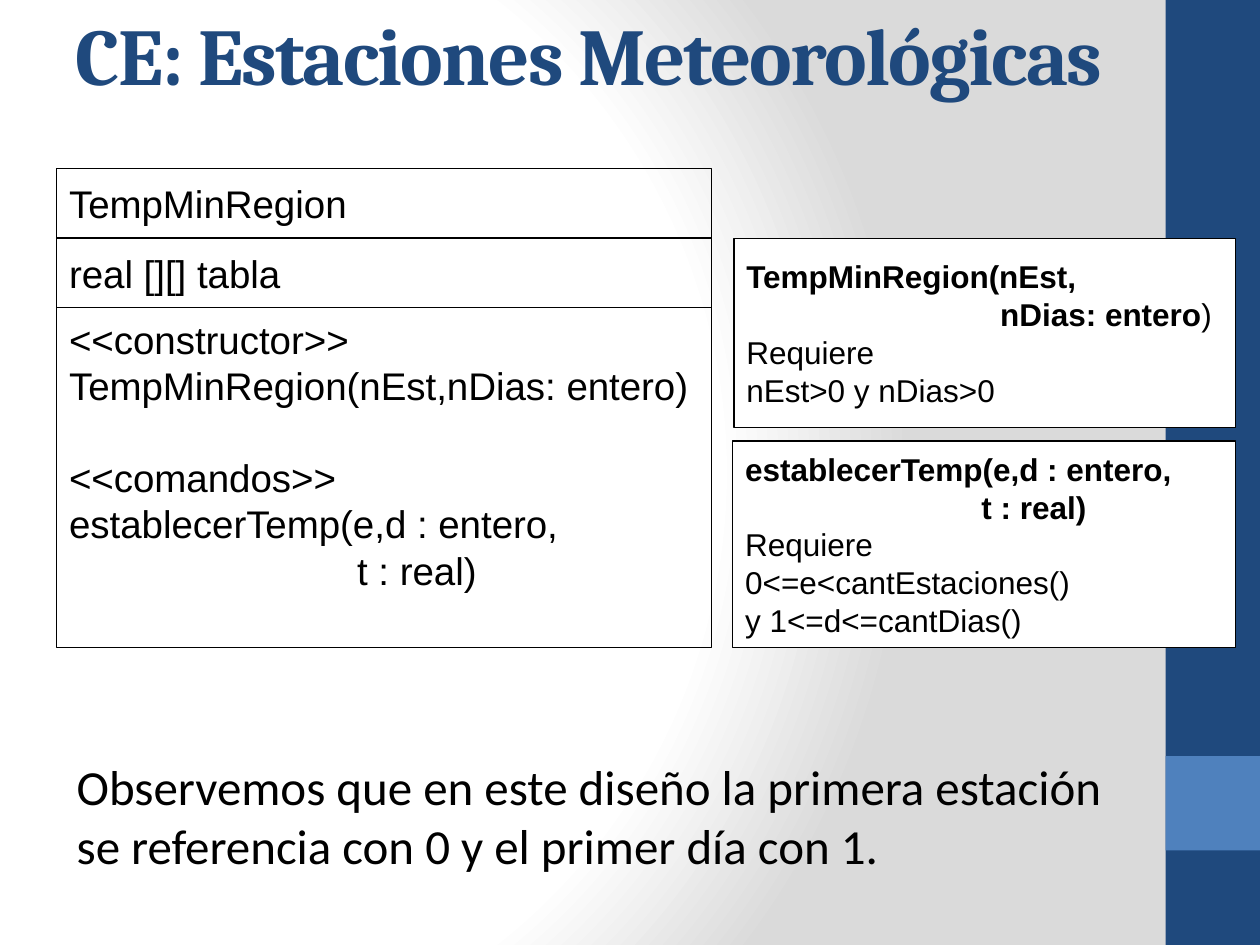
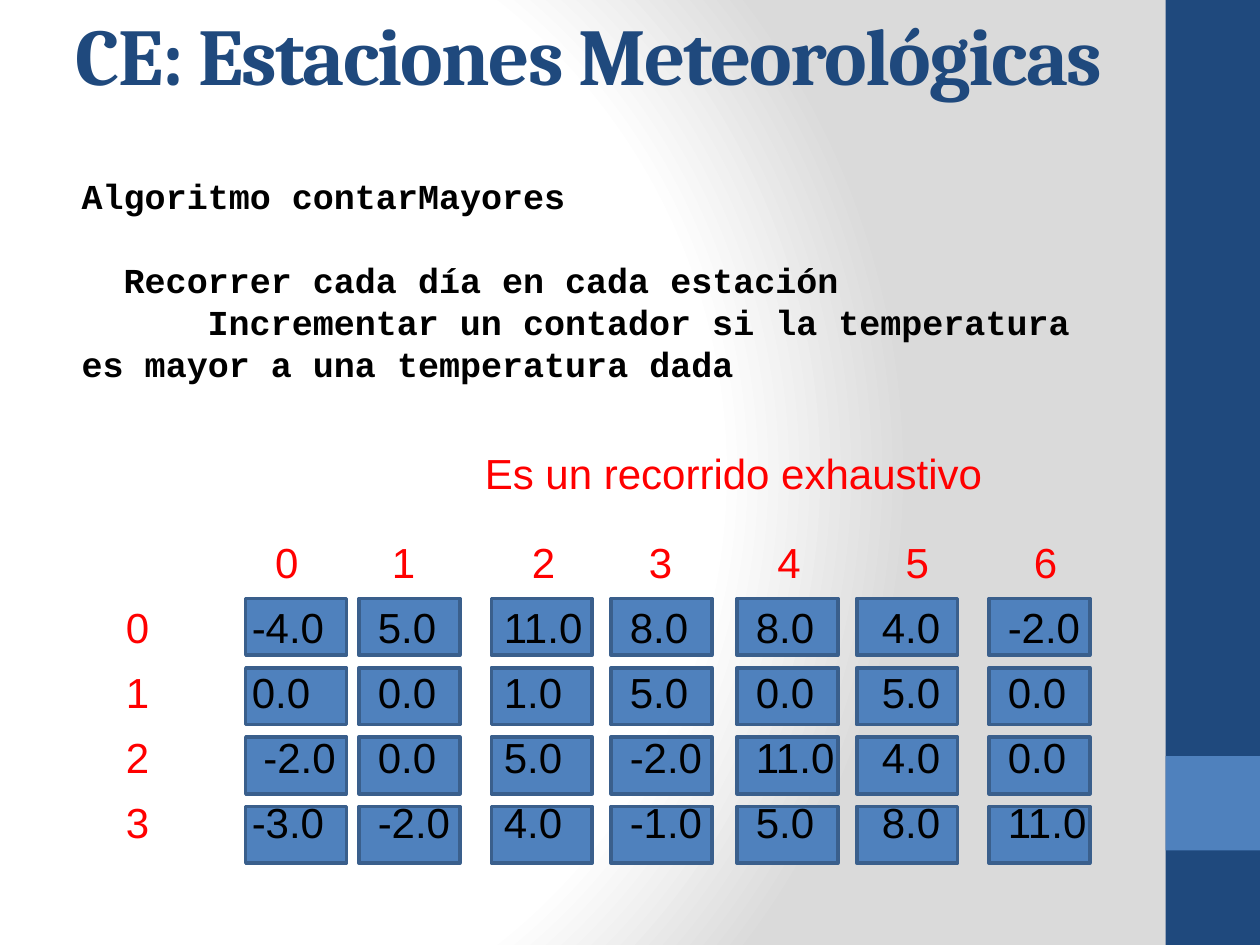
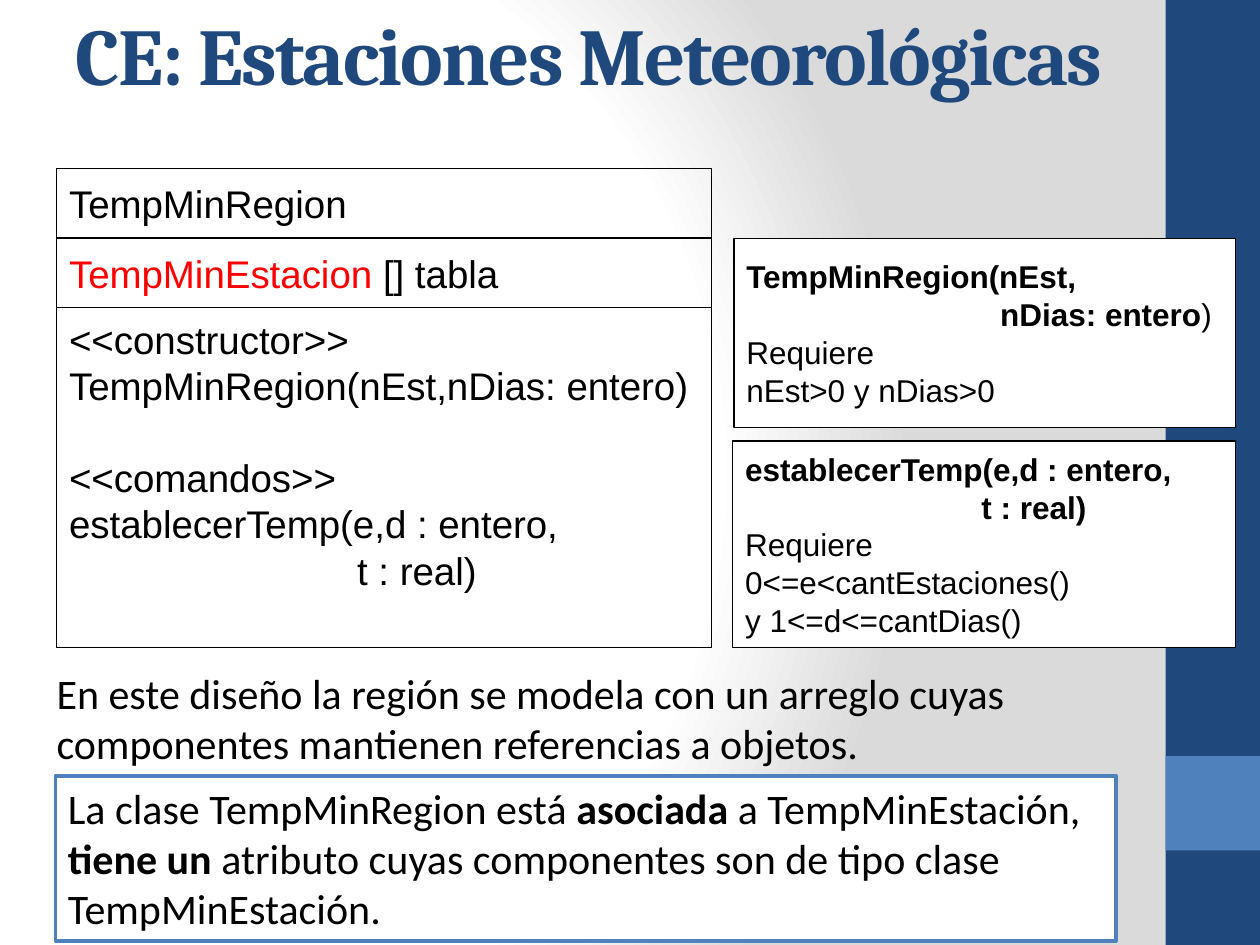
from dataclasses import dataclass
from lxml.etree import SubElement
from pptx import Presentation
from pptx.dml.color import RGBColor
from pptx.enum.shapes import MSO_SHAPE
from pptx.enum.text import MSO_ANCHOR, MSO_AUTO_SIZE, PP_ALIGN
from pptx.oxml import parse_xml
from pptx.oxml.ns import nsdecls, qn
from pptx.util import Pt

NAVY = RGBColor(0x1F, 0x49, 0x7D)
BLUE = RGBColor(0x4F, 0x81, 0xBD)
EDGE = RGBColor(0x3A, 0x5F, 0x8C)
BLACK = RGBColor(0, 0, 0)
WHITE = RGBColor(0xFF, 0xFF, 0xFF)
RED = RGBColor(0xFF, 0, 0)


@dataclass
class Span:
    text: str
    bold: bool = False
    color: RGBColor = BLACK


@dataclass
class Line:
    spans: list
    left: float = 0
    first: float = 0
    gap: float = 0
    tabs: tuple = ()


def plain(text, **layout):
    return Line([Span(text)], **layout)


def strong(text, **layout):
    return Line([Span(text, True)], **layout)


TITLE = "CE: Estaciones Meteorológicas"
BANDS = [(0, 540, NAVY), (432, 54, BLUE)]

CLASS_NAME = [plain("TempMinRegion")]
MATRIX_FIELD = [plain("real [][] tabla")]
OBJECT_FIELD = [Line([Span("TempMinEstacion", color=RED), Span(" [] tabla")])]
SERVICES = [
    plain("<<constructor>>"),
    plain("TempMinRegion(nEst,nDias: entero)"),
    plain("<<comandos>>", gap=26.4),
    plain("establecerTemp(e,d : entero,"),
    plain("t : real)", left=164.6),
]
CONTRACTS = [
    ((418.7, 252, 287.3, 118.1), [
        strong("establecerTemp(e,d : entero,"),
        strong("t : real)", left=135),
        plain("Requiere"),
        plain("0<=e<cantEstaciones()"),
        plain("y 1<=d<=cantDias()"),
    ]),
    ((419.4, 136.2, 286.6, 108), [
        strong("TempMinRegion(nEst,"),
        Line([Span("nDias: entero", True), Span(")")], left=145),
        plain("Requiere"),
        plain("nEst>0 y nDias>0"),
    ]),
]
INDEX_NOTE = [plain("Observemos que en este diseño la primera estación se referencia "
                    "con 0 y el primer día con 1.")]
DESIGN_NOTE = [plain("En este diseño la región se modela con un arreglo cuyas "
                     "componentes mantienen referencias a objetos.")]
ASSOCIATION = [Line([
    Span("La clase TempMinRegion está "),
    Span("asociada", True),
    Span(" a TempMinEstación, "),
    Span("tiene un ", True),
    Span("atributo cuyas componentes son de tipo clase TempMinEstación."),
])]
ALGORITHM = [
    strong("Algoritmo contarMayores"),
    strong("Recorrer cada día en cada estación", left=24, gap=24),
    strong("Incrementar un contador si la temperatura es mayor a una temperatura dada",
           first=72),
]
TRAVERSAL = [Line([Span("Es un recorrido exhaustivo", color=RED)])]
TEMPERATURES = [
    ["-4.0", "5.0", "11.0", "8.0", "8.0", "4.0", "-2.0"],
    ["0.0", "0.0", "1.0", "5.0", "0.0", "5.0", "0.0"],
    [" -2.0", "0.0", "5.0", "-2.0", "11.0", "4.0", "0.0"],
    ["-3.0", "-2.0", "4.0", "-1.0", "5.0", "8.0", "11.0"],
]
CELL_LEFTS = [140.4, 205.2, 280.8, 349.2, 421.2, 489.6, 565.2]
CELL_TOP, CELL_STEP, CELL_WIDTH, CELL_HEIGHT = 342, 39.6, 57.6, 32.4
TAB_STEP = 72
DAY_TABS = (85.3, 152.1, 232.1, 298.9, 372.3, 445.7, 519)
VALUE_TABS = tuple(TAB_STEP * day for day in range(1, 8))
ROW_GAP = 8.4


def lay_out(para, line, size):
    para.alignment = PP_ALIGN.LEFT
    para.line_spacing = Pt(size * 1.2)
    para.space_before = Pt(line.gap)
    properties = para._p.get_or_add_pPr()
    if line.left:
        properties.set("marL", str(Pt(line.left)))
    if line.first:
        properties.set("indent", str(Pt(line.first)))
    if line.tabs:
        properties.set("defTabSz", str(Pt(TAB_STEP)))
        stops = SubElement(properties, qn("a:tabLst"))
        for position in line.tabs:
            SubElement(stops, qn("a:tab"), pos=str(Pt(position)), algn="l")


def fill_text(shape, lines, font, size, anchor=MSO_ANCHOR.TOP):
    frame = shape.text_frame
    frame.word_wrap = True
    frame.auto_size = MSO_AUTO_SIZE.NONE
    frame.vertical_anchor = anchor
    for number, line in enumerate(lines):
        para = frame.add_paragraph() if number else frame.paragraphs[0]
        lay_out(para, line, size)
        for span in line.spans:
            run = para.add_run()
            run.text = span.text
            run.font.name = font
            run.font.size = Pt(size)
            run.font.bold = span.bold
            run.font.color.rgb = span.color


def add_box(page, place, fill=None, edge=None, weight=0.75):
    box = page.shapes.add_shape(MSO_SHAPE.RECTANGLE, *map(Pt, place))
    box.shadow.inherit = False
    if fill is None:
        box.fill.background()
    else:
        box.fill.solid()
        box.fill.fore_color.rgb = fill
    if edge is None:
        box.line.fill.background()
    else:
        box.line.color.rgb = edge
        box.line.width = Pt(weight)
    return box


def add_note(page, place, lines, font, size):
    fill_text(page.shapes.add_textbox(*map(Pt, place)), lines, font, size)


def add_page(deck):
    page = deck.slides.add_slide(deck.slide_layouts[5])
    title = page.shapes.title
    title.left, title.top, title.width, title.height = map(Pt, (36, 6.5, 646.6, 47.5))
    fill_text(title, [Line([Span(TITLE, True, NAVY)])], "Cambria", 46, MSO_ANCHOR.MIDDLE)
    para = title.text_frame.paragraphs[0]
    para.line_spacing = 1.0
    para.runs[0].font._element.set("spc", "-100")
    return page


def style_master(deck, page):
    master = deck.slide_master
    master.background.fill.solid()
    background = master.element.xpath("p:cSld/p:bg/p:bgPr")[0]
    background.replace(background[0], parse_xml(
        f'<a:gradFill {nsdecls("a")} rotWithShape="1"><a:gsLst>'
        f'<a:gs pos="0"><a:srgbClr val="{WHITE}"/></a:gs>'
        f'<a:gs pos="75000"><a:srgbClr val="{WHITE}"/></a:gs>'
        '<a:gs pos="100000"><a:srgbClr val="DADADA"/></a:gs></a:gsLst>'
        '<a:path path="circle"><a:fillToRect l="20000" t="50000" r="100000" b="50000"/>'
        '</a:path></a:gradFill>'))
    for number, (top, height, color) in enumerate(BANDS):
        band = add_box(page, (666, top, 54, height), color).element
        band.xpath(".//p:cNvPr")[0].set("id", str(100 + number))
        master.shapes.element.insert(2 + number, band)


def add_class_diagram(page, field):
    top = 96.4
    for lines, height, bottom in [(CLASS_NAME, 39.6, 3.6), (field, 39.6, 3.6),
                                  (SERVICES, 194.4, 30)]:
        box = add_box(page, (32.4, top, 374.4, height), edge=BLACK)
        fill_text(box, lines, "Arial", 22, MSO_ANCHOR.MIDDLE)
        box.text_frame.margin_bottom = Pt(bottom)
        top += height
    for place, lines in CONTRACTS:
        box = add_box(page, place, WHITE, BLACK)
        fill_text(box, lines, "Arial", 18, MSO_ANCHOR.MIDDLE)


def add_temperature_grid(page):
    days = "".join(f"\t{day}" for day in range(len(CELL_LEFTS)))
    lines = [Line([Span(days, color=RED)], tabs=DAY_TABS)]
    for station, values in enumerate(TEMPERATURES):
        for left in CELL_LEFTS:
            top = CELL_TOP + station * CELL_STEP
            add_box(page, (left, top, CELL_WIDTH, CELL_HEIGHT), BLUE, EDGE, 2)
        lines.append(Line([Span(str(station), color=RED), Span("\t" + "\t".join(values))],
                          gap=ROW_GAP, tabs=VALUE_TABS))
    add_note(page, (64.8, 303.1, 655.2, 236.9), lines, "Arial", 24)


def main():
    deck = Presentation()
    deck.slide_width, deck.slide_height = Pt(720), Pt(540)

    matrix_page = add_page(deck)
    style_master(deck, matrix_page)
    add_class_diagram(matrix_page, MATRIX_FIELD)
    add_note(matrix_page, (36.7, 428.8, 601.2, 74.9), INDEX_NOTE, "Calibri", 28)

    algorithm_page = add_page(deck)
    add_note(algorithm_page, (39.6, 96.1, 604.1, 128.2), ALGORITHM, "Courier New", 20)
    add_temperature_grid(algorithm_page)
    add_note(algorithm_page, (270, 252, 525.6, 36.7), TRAVERSAL, "Arial", 24)

    object_page = add_page(deck)
    add_class_diagram(object_page, OBJECT_FIELD)
    add_note(object_page, (25.2, 377.8, 601.2, 65.5), DESIGN_NOTE, "Calibri", 24)
    association = add_box(object_page, (31.7, 443.3, 606.2, 94.3), WHITE, BLUE, 2)
    fill_text(association, ASSOCIATION, "Calibri", 24)

    deck.save("out.pptx")


if __name__ == "__main__":
    main()
